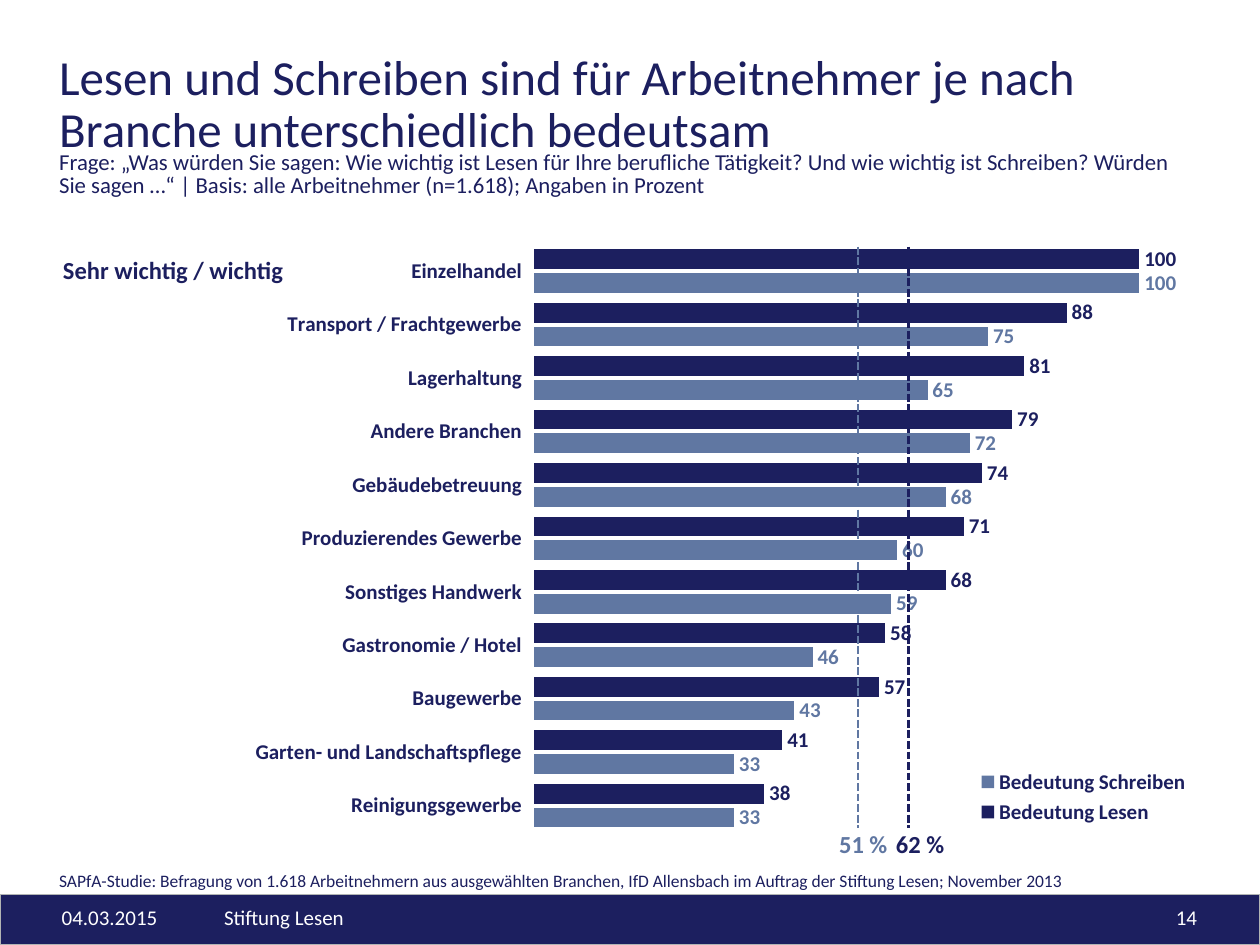
from lxml import etree
from pptx import Presentation
from pptx.chart.data import CategoryChartData
from pptx.dml.color import RGBColor
from pptx.enum.chart import XL_CHART_TYPE as ChartType
from pptx.enum.chart import XL_LABEL_POSITION as LabelPosition
from pptx.enum.chart import XL_LEGEND_POSITION as LegendPosition
from pptx.enum.chart import XL_TICK_MARK as TickMark
from pptx.enum.dml import MSO_LINE as Dash
from pptx.enum.shapes import MSO_CONNECTOR as Connector
from pptx.enum.shapes import MSO_SHAPE as Shape
from pptx.enum.text import PP_ALIGN as Align
from pptx.oxml.ns import qn
from pptx.util import Pt

FONT = "Calibri"
NAVY, STEEL, WHITE, GREY = "1C1F5F", "6077A2", "FFFFFF", "B1B4B4"

TITLE = "Lesen und Schreiben sind für Arbeitnehmer je nach Branche unterschiedlich bedeutsam"
QUESTION = (
    "Frage: „Was würden Sie sagen: Wie wichtig ist Lesen für Ihre berufliche Tätigkeit? "
    "Und wie wichtig ist Schreiben? Würden Sie sagen …“ | "
    "Basis: alle Arbeitnehmer (n=1.618); Angaben in Prozent"
)
SOURCE = (
    "SAPfA-Studie: Befragung von 1.618 Arbeitnehmern aus ausgewählten Branchen, "
    "IfD Allensbach im Auftrag der Stiftung Lesen; November 2013"
)
# branch, reading, writing
BRANCHES = [
    ("Einzelhandel", 100, 100),
    ("Transport / Frachtgewerbe", 88, 75),
    ("Lagerhaltung", 81, 65),
    ("Andere Branchen", 79, 72),
    ("Gebäudebetreuung", 74, 68),
    ("Produzierendes Gewerbe", 71, 60),
    ("Sonstiges Handwerk", 68, 59),
    ("Gastronomie / Hotel", 58, 46),
    ("Baugewerbe", 57, 43),
    ("Garten- und Landschaftspflege", 41, 33),
    ("Reinigungsgewerbe", 38, 33),
]
SERIES = [("Bedeutung Lesen", NAVY), ("Bedeutung Schreiben", STEEL)]
# label, colour, x of the line, x of the label
AVERAGES = [("62 %", NAVY, 519, 512), ("51 %", STEEL, 490.3, 479.5)]
# text, left, width, alignment
FOOTER = [
    ("04.03.2015", 35.3, 78, Align.LEFT),
    ("Stiftung Lesen", 128, 228, Align.LEFT),
    ("14", 516, 168, Align.RIGHT),
]


def rgb(value):
    return RGBColor.from_string(value)


def style(font, size, color, bold=False):
    font.name, font.size, font.bold = FONT, Pt(size), bold
    font.color.rgb = rgb(color)


def add_text(page, text, left, top, width, height, size, color=NAVY,
             bold=False, align=Align.LEFT, spacing=None):
    box = page.shapes.add_textbox(Pt(left), Pt(top), Pt(width), Pt(height))
    frame = box.text_frame
    frame.word_wrap = True
    frame.margin_left = frame.margin_right = frame.margin_top = frame.margin_bottom = 0
    para = frame.paragraphs[0]
    para.text, para.alignment = text, align
    if spacing:
        para.line_spacing = Pt(spacing)
    style(para.font, size, color, bold)


def set_layout(parent, index, x, y, w, h, inner=False):
    """Place a chart part by fractions of the chart area."""
    for old in parent.findall(qn("c:layout")):
        parent.remove(old)
    layout = etree.Element(qn("c:layout"))
    manual = etree.SubElement(layout, qn("c:manualLayout"))
    values = [("layoutTarget", "inner")] if inner else []
    values += [("xMode", "edge"), ("yMode", "edge"), ("x", x), ("y", y), ("w", w), ("h", h)]
    for tag, value in values:
        etree.SubElement(manual, qn("c:" + tag)).set("val", str(value))
    parent.insert(index, layout)


def add_branch_chart(page):
    names, *columns = zip(*BRANCHES)
    data = CategoryChartData(number_format="#,##0")
    data.categories = names
    for (name, _), values in zip(SERIES, columns):
        data.add_series(name, values)
    chart = page.shapes.add_chart(
        ChartType.BAR_CLUSTERED, Pt(30.3), Pt(139.7), Pt(658), Pt(337.7), data).chart
    chart.has_title = False
    style(chart.font, 12, NAVY, True)

    plot = chart.plots[0]
    plot.gap_width, plot.overlap, plot.vary_by_categories = 50, -20, False
    for series, (_, color) in zip(plot.series, SERIES):
        series.format.fill.solid()
        series.format.fill.fore_color.rgb = rgb(color)
        labels = series.data_labels
        labels.show_value = True
        labels.number_format, labels.number_format_is_linked = "#,##0", False
        labels.position = LabelPosition.OUTSIDE_END
        style(labels.font, 12, color, True)

    branches, scale = chart.category_axis, chart.value_axis
    branches.reverse_order = True
    branches.major_tick_mark = TickMark.OUTSIDE
    branches.format.line.fill.background()
    scale.minimum_scale, scale.maximum_scale = 0, 110
    scale.has_major_gridlines = False
    scale.visible = False

    chart.has_legend = True
    legend = chart.legend
    legend.position = LegendPosition.RIGHT
    legend.include_in_layout = False
    style(legend.font, 12, NAVY, True)
    plot_area = chart.element.find(".//" + qn("c:plotArea"))
    set_layout(plot_area, 0, 0.418, 0, 0.578, 0.995, inner=True)
    set_layout(chart.element.find(".//" + qn("c:legend")), 1, 0.8, 0.88, 0.19, 0.11)


def add_average(page, label, color, line_x, label_x):
    line = page.shapes.add_connector(
        Connector.STRAIGHT, Pt(line_x), Pt(141), Pt(line_x), Pt(473))
    line.line.color.rgb = rgb(color)
    line.line.width = Pt(1.5)
    line.line.dash_style = Dash.SQUARE_DOT
    etree.SubElement(line.element.spPr, qn("a:effectLst"))
    add_text(page, label, label_x, 474, 62.6, 28, 14, color, bold=True)


def add_footer(page):
    band = page.shapes.add_shape(Shape.RECTANGLE, 0, Pt(511), Pt(720), Pt(29))
    band.shadow.inherit = False
    band.fill.solid()
    band.fill.fore_color.rgb = rgb(NAVY)
    band.line.color.rgb = rgb(GREY)
    band.line.width = Pt(0.75)
    for text, left, width, align in FOOTER:
        add_text(page, text, left, 517, width, 17, 12, WHITE, align=align)


def main():
    deck = Presentation()
    deck.slide_width, deck.slide_height = Pt(720), Pt(540)
    page = deck.slides.add_slide(deck.slide_layouts[6])
    add_footer(page)
    add_text(page, SOURCE, 33.8, 497, 650, 14, 10)
    add_text(page, TITLE, 33.8, 30, 581, 74, 28, spacing=30)
    add_branch_chart(page)
    add_text(page, "Sehr wichtig / wichtig", 36, 145.5, 623, 17, 14, bold=True)
    for average in AVERAGES:
        add_average(page, *average)
    add_text(page, QUESTION, 33.8, 87, 649.5, 35, 13, spacing=13)
    deck.save("out.pptx")


if __name__ == "__main__":
    main()
